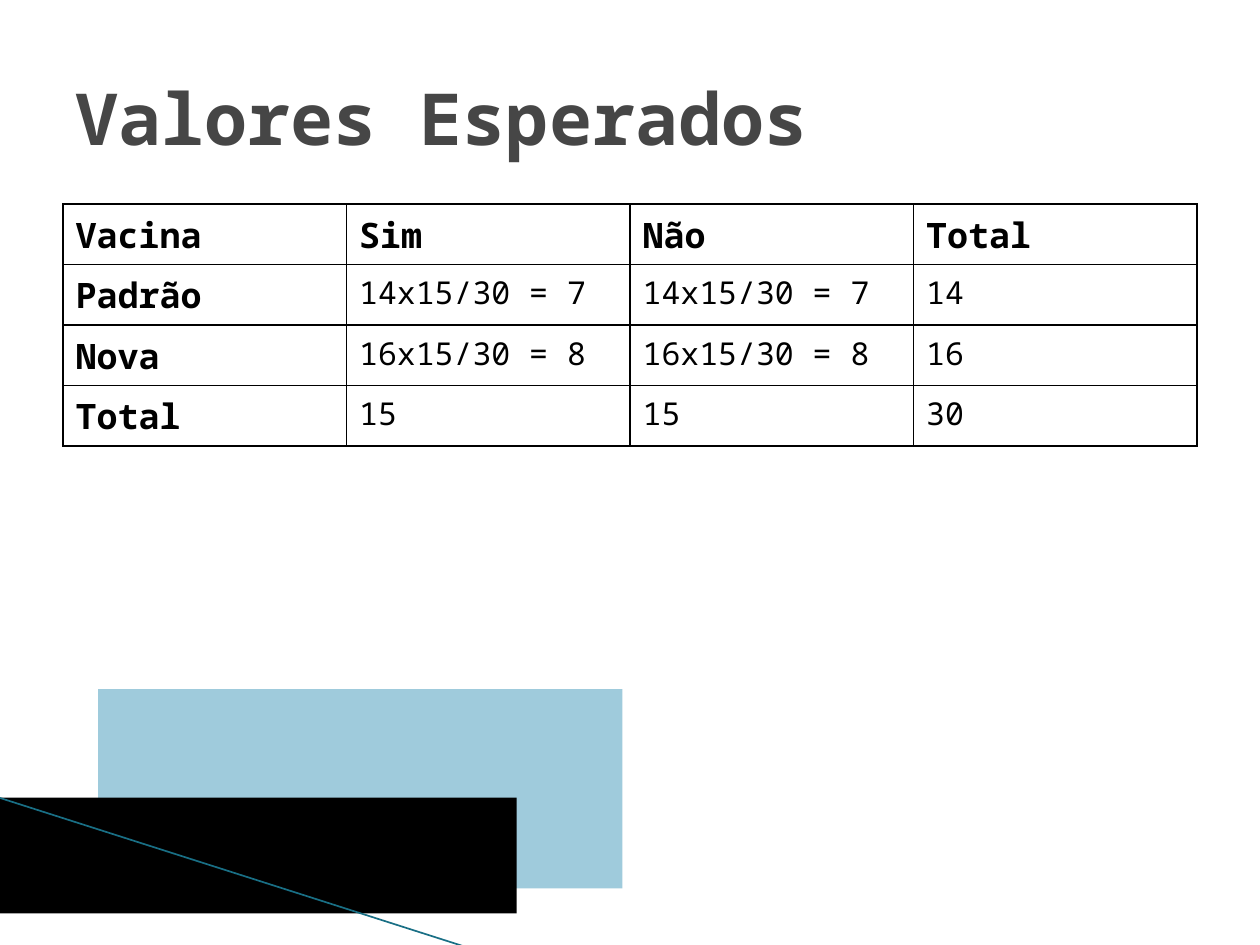
from lxml.etree import SubElement
from pptx import Presentation
from pptx.dml.color import RGBColor
from pptx.enum.shapes import MSO_CONNECTOR, MSO_SHAPE
from pptx.enum.text import MSO_ANCHOR, PP_ALIGN
from pptx.oxml import parse_xml
from pptx.oxml.ns import nsdecls, qn
from pptx.util import Inches, Pt

BLACK = RGBColor(0x00, 0x00, 0x00)
GRAY = RGBColor(0x46, 0x46, 0x46)
LIGHT_BLUE = RGBColor(0x9F, 0xCB, 0xDC)
TEAL = RGBColor(0x19, 0x6F, 0x85)
FONT = "Noto Sans Mono"

EXPECTED_VALUES = [
    ["Vacina", "Sim", "Não", "Total"],
    ["Padrão", "14x15/30 = 7", "14x15/30 = 7", "14"],
    ["Nova", "16x15/30 = 8", "16x15/30 = 8", "16"],
    ["Total", "15", "15", "30"],
]


def write(frame, text, *, size, color=BLACK, bold=False):
    paragraph = frame.paragraphs[0]
    paragraph.alignment = PP_ALIGN.LEFT
    run = paragraph.add_run()
    run.text = text
    font = run.font
    font.name, font.size, font.bold = FONT, Pt(size), bold
    font.color.rgb = color


def add_borders(cell, color=BLACK, width=1):
    """Draw all four cell borders; they must precede the fill in the XML."""
    properties = cell._tc.get_or_add_tcPr()
    for position, side in enumerate(("lnL", "lnR", "lnT", "lnB")):
        properties.insert(position, parse_xml(
            f'<a:{side} {nsdecls("a")} w="{Pt(width)}"><a:solidFill>'
            f'<a:srgbClr val="{color}"/></a:solidFill></a:{side}>'))


class SlideBuilder:
    def __init__(self, slide):
        self.slide = slide
        self.heading_size = 20
        self.body_size = 18

    def title(self, text, left, top, width, height):
        title = self.slide.shapes.title
        title.left, title.top = Inches(left), Inches(top)
        title.width, title.height = Inches(width), Inches(height)
        title.text_frame.word_wrap = True
        title.text_frame.vertical_anchor = MSO_ANCHOR.MIDDLE
        write(title.text_frame, text, size=41, color=GRAY, bold=True)

    def block(self, left, top, width, height, color):
        block = self.slide.shapes.add_shape(
            MSO_SHAPE.RECTANGLE, Inches(left), Inches(top), Inches(width), Inches(height))
        block.shadow.inherit = False
        block.fill.solid()
        block.fill.fore_color.rgb = color
        block.line.fill.background()

    def line(self, x1, y1, x2, y2, color, width):
        line = self.slide.shapes.add_connector(
            MSO_CONNECTOR.STRAIGHT, Inches(x1), Inches(y1), Inches(x2), Inches(y2))
        line.line.color.rgb = color
        line.line.width = Pt(width)
        SubElement(line._element.spPr, qn("a:effectLst"))

    def table(self, rows, left, top, width, height):
        table = self.slide.shapes.add_table(
            len(rows), len(rows[0]),
            Inches(left), Inches(top), Inches(width), Inches(height)).table
        table.first_row = table.horz_banding = False
        for r, row in enumerate(rows):
            for c, text in enumerate(row):
                cell = table.cell(r, c)
                heading = r == 0 or c == 0
                cell.fill.background()
                add_borders(cell)
                write(cell.text_frame, text, bold=heading,
                      size=self.heading_size if heading else self.body_size)


def main():
    presentation = Presentation()
    presentation.slide_width, presentation.slide_height = Inches(10), Inches(7.5)
    builder = SlideBuilder(
        presentation.slides.add_slide(presentation.slide_layouts.get_by_name("Title Only")))
    builder.block(0.78, 5.47, 4.16, 1.58, LIGHT_BLUE)
    builder.block(-0.06, 6.33, 4.16, 0.92, BLACK)
    builder.line(-0.01, 6.33, 3.71, 7.52, TEAL, 0.96)
    builder.table(EXPECTED_VALUES, 0.5, 1.62, 9, 1.73)
    builder.title("Valores Esperados", 0.5, 0.3, 9, 1.25)
    presentation.save("out.pptx")


if __name__ == "__main__":
    main()
